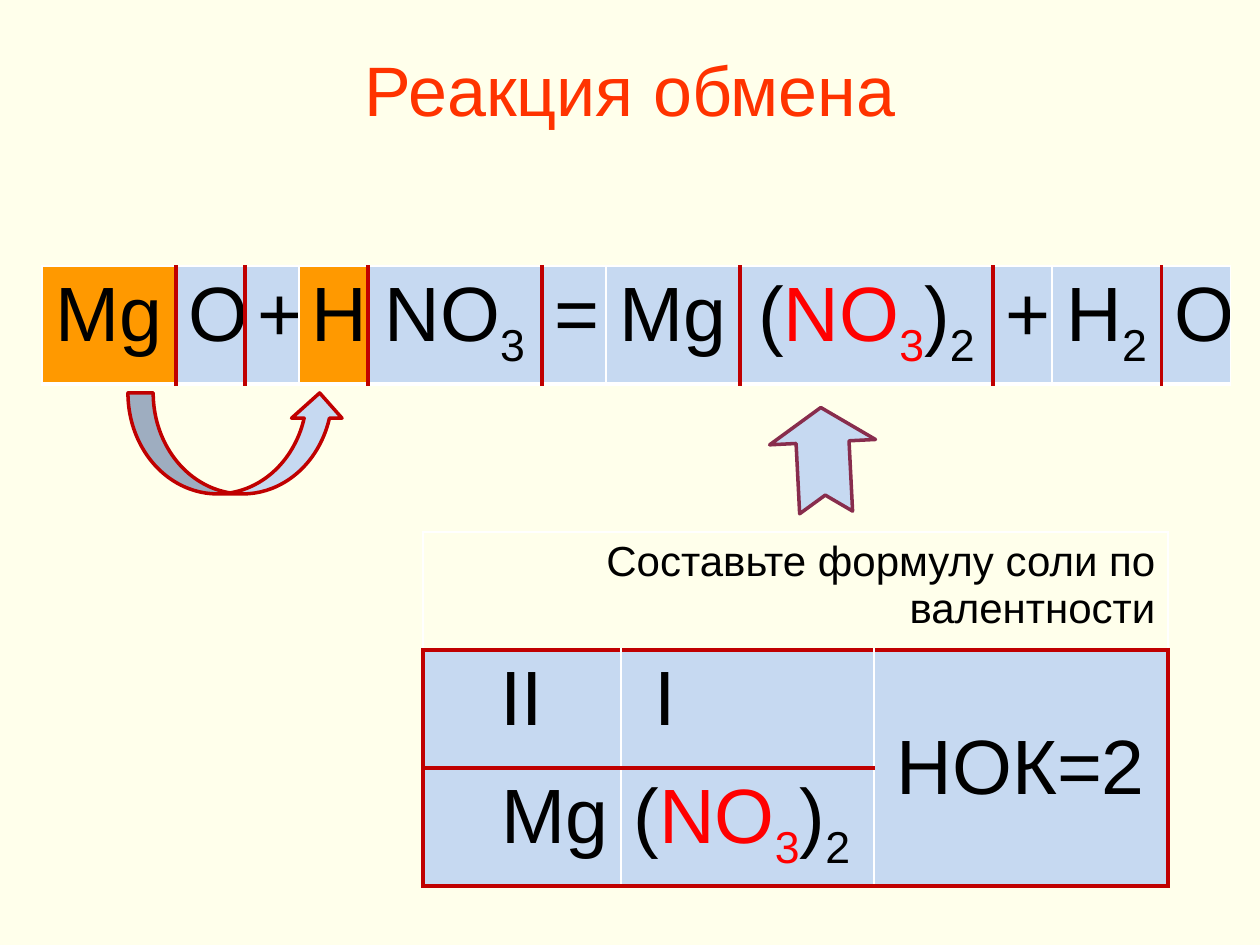
from lxml import etree
from pptx import Presentation
from pptx import util as u
from pptx.dml.color import RGBColor
from pptx.enum import shapes, text
from pptx.oxml import ns

PX = 914400 / 126
BLUE, ORANGE, BLACK, RED = "C6D9F1", "FF9900", "000000", "FF0000"
DARK_RED, WHITE = "C00000", "FFFFFF"
LEFT, CENTER, RIGHT = text.PP_ALIGN.LEFT, text.PP_ALIGN.CENTER, text.PP_ALIGN.RIGHT
MIDDLE = text.MSO_ANCHOR.MIDDLE

# Formula parts: (text, colour, is subscript)
NITRATE = [("(", BLACK, False), ("NO", RED, False), ("3", RED, True),
           (")", BLACK, False), ("2", BLACK, True)]


def px(*lengths):
    return [u.Emu(round(length * PX)) for length in lengths]


def color(value):
    return RGBColor.from_string(value)


def plain(words, subscript=""):
    parts = [(words, BLACK, False)]
    return parts + [(subscript, BLACK, True)] if subscript else parts


def write(frame, parts, size, align):
    para = frame.paragraphs[0]
    para.alignment = align
    for words, ink, is_subscript in parts:
        span = para.add_run()
        span.text = words
        formats = {"name": "Arial", "size": u.Pt(size), "bold": False}
        for key, value in formats.items():
            setattr(span.font, key, value)
        span.font.color.rgb = color(ink)
        if is_subscript:
            span.font._element.set("baseline", "-25000")


def set_borders(cell, **borders):
    """Each border is (colour, points); the lines come before the fill."""
    properties = cell._tc.get_or_add_tcPr()
    for index, side in enumerate("LRTB"):
        ink, points = borders.get(side, (WHITE, 1))
        line = etree.Element(ns.qn(f"a:ln{side}"), w=str(u.Pt(points)))
        fill = etree.SubElement(line, ns.qn("a:solidFill"))
        etree.SubElement(fill, ns.qn("a:srgbClr"), val=ink)
        properties.insert(index, line)


def fill_cell(cell, parts, size=44, align=CENTER, fill=BLUE, anchor=None):
    write(cell.text_frame, parts, size, align)
    if anchor is not None:
        cell.vertical_anchor = anchor
    if fill:
        cell.fill.solid()
        cell.fill.fore_color.rgb = color(fill)
    else:
        cell.fill.background()


def add_table(page, left, top, widths, heights):
    frame = page.shapes.add_table(len(heights), len(widths),
                                  *px(left, top, sum(widths), sum(heights)))
    table = frame.table
    table.first_row = table.horz_banding = False
    for column, width in zip(table.columns, px(*widths)):
        column.width = width
    for row, height in zip(table.rows, px(*heights)):
        row.height = height
    return table


def add_arrow(page, kind, box, line):
    arrow = page.shapes.add_shape(kind, *px(*box))
    arrow.shadow.inherit = False
    arrow.fill.solid()
    arrow.fill.fore_color.rgb = color(BLUE)
    arrow.line.color.rgb = color(line)
    arrow.line.width = u.Pt(2)
    return arrow


def add_title(page):
    box = page.shapes.add_textbox(*px(63, 29, 1134, 118))
    box.text_frame.word_wrap = True
    box.text_frame.vertical_anchor = MIDDLE
    write(box.text_frame, [("Реакция обмена", "FF3300", False)], 40, CENTER)


def add_equation(page):
    # (width, formula, fill, red line on the right)
    cells = [
        (134, plain("Mg"), ORANGE, True),
        (69, plain("O"), BLUE, True),
        (54, plain("+"), BLUE, False),
        (69, plain("H"), ORANGE, True),
        (174, plain("NO", "3"), BLUE, True),
        (64, plain("="), BLUE, False),
        (134, plain("Mg"), BLUE, True),
        (253, NITRATE, BLUE, True),
        (59, plain("+"), BLUE, False),
        (110, plain("H", "2"), BLUE, True),
        (69, plain("O"), BLUE, False),
    ]
    table = add_table(page, 42, 266, [cell[0] for cell in cells], [118])
    left = (WHITE, 1)
    for index, (_, formula, fill, is_split) in enumerate(cells):
        right = (DARK_RED, 2.25) if is_split else (WHITE, 1)
        cell = table.cell(0, index)
        fill_cell(cell, formula, fill=fill)
        set_borders(cell, L=left, R=right, B=(WHITE, 3))
        left = right


def add_valency(page):
    table = add_table(page, 423, 532, [198, 253, 294], [118] * 3)
    table.cell(0, 0).merge(table.cell(0, 2))
    table.cell(1, 2).merge(table.cell(2, 2))
    fill_cell(table.cell(0, 0), plain("Составьте формулу соли по валентности"),
              size=24, align=RIGHT, fill=None)
    fill_cell(table.cell(1, 0), plain("II"))
    fill_cell(table.cell(1, 1), plain(" I"), align=LEFT)
    fill_cell(table.cell(1, 2), plain("НОК=2"), anchor=MIDDLE)
    fill_cell(table.cell(2, 0), plain("Mg"), align=RIGHT)
    fill_cell(table.cell(2, 1), NITRATE, align=LEFT)

    # Red frame, with a red line between valencies and formula
    red = (DARK_RED, 2.25)
    for column in range(3):
        set_borders(table.cell(0, column), B=red)
        sides = {0: {"L": red}, 2: {"R": red}}.get(column, {})
        for row in (1, 2):
            set_borders(table.cell(row, column), T=red, B=red, **sides)


def main():
    deck = Presentation()
    deck.slide_width, deck.slide_height = px(1260, 945)
    page = deck.slides.add_slide(deck.slide_layouts[6])
    page.background.fill.solid()
    page.background.fill.fore_color.rgb = color("FFFFEB")

    add_title(page)
    add_equation(page)
    add_arrow(page, shapes.MSO_SHAPE.CURVED_UP_ARROW, (128, 393, 217, 101), DARK_RED)
    add_valency(page)

    # Arrow from the valency table up to the salt
    pointer = add_arrow(page, shapes.MSO_SHAPE.NOTCHED_RIGHT_ARROW,
                        (771, 407, 105, 106), "882D4D")
    pointer.rotation = 267.1
    pointer.adjustments[0] = 0.5
    pointer.adjustments[1] = 0.33

    deck.save("out.pptx")


if __name__ == "__main__":
    main()
